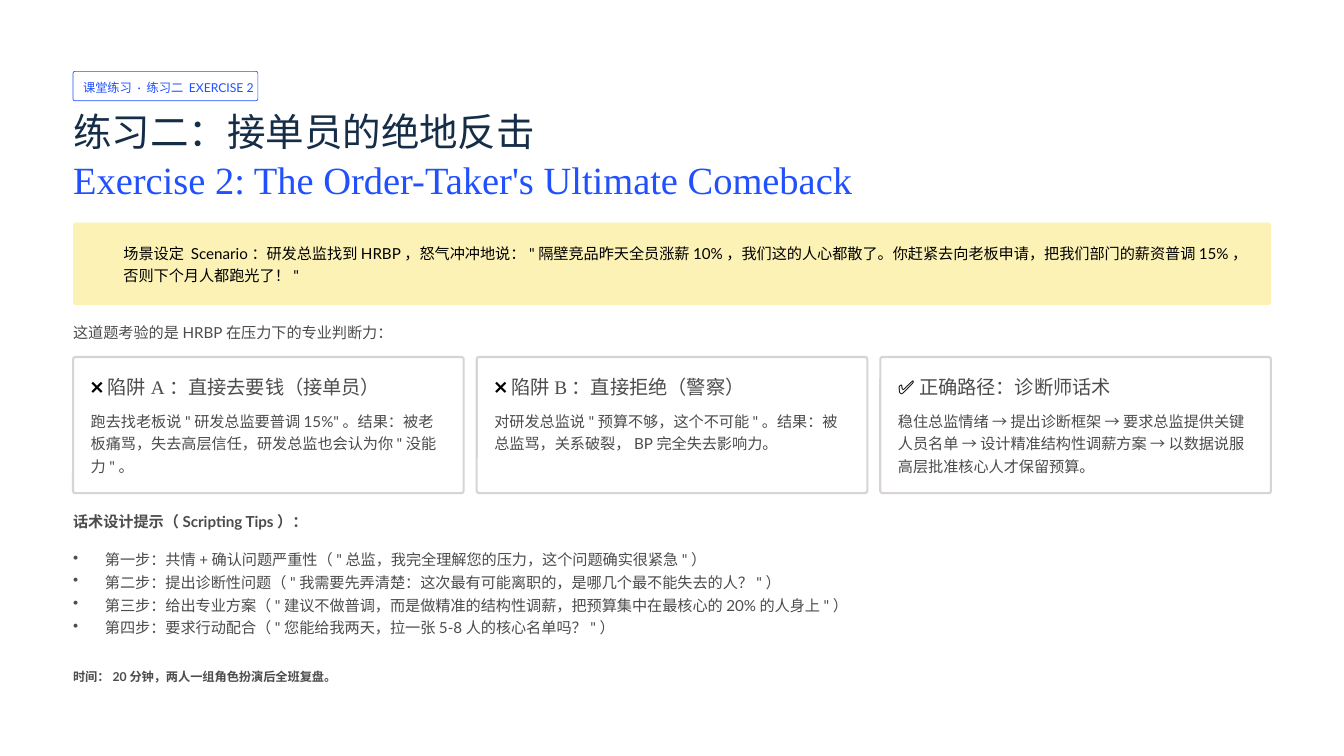
from lxml.etree import SubElement
from pptx import Presentation
from pptx.dml.color import RGBColor
from pptx.enum.shapes import MSO_SHAPE as Kind
from pptx.oxml.ns import qn
from pptx.util import Inches, Pt

BLUE, NAVY, GRAY, BLACK, WHITE = "2150FE", "152D47", "4C4C4D", "000000", "FFFFFF"
SAND, EDGE = "FCF2B5", "D8D4D4"
BODY, HEAD = "Lato", "Times New Roman"

TAG = "课堂练习 · 练习二 EXERCISE 2"
TITLE = [
    [("练习二：接单员的绝地反击", NAVY)],
    [("Exercise 2: The Order-Taker's Ultimate Comeback", BLUE)],
]
SCENE = "场景设定 Scenario：研发总监找到HRBP，怒气冲冲地说：\"隔壁竞品昨天全员涨薪10%，我们这的人心都散了。你赶紧去向老板申请，把我们部门的薪资普调15%，否则下个月人都跑光了！\""
INTRO = "这道题考验的是HRBP在压力下的专业判断力："
CARDS = [
    ("❌", " 陷阱A：直接去要钱（接单员）",
     "跑去找老板说\"研发总监要普调15%\"。结果：被老板痛骂，失去高层信任，研发总监也会认为你\"没能力\"。"),
    ("❌", " 陷阱B：直接拒绝（警察）",
     "对研发总监说\"预算不够，这个不可能\"。结果：被总监骂，关系破裂，BP完全失去影响力。"),
    ("✅", " 正确路径：诊断师话术",
     "稳住总监情绪 → 提出诊断框架 → 要求总监提供关键人员名单 → 设计精准结构性调薪方案 → 以数据说服高层批准核心人才保留预算。"),
]
TIPS = "话术设计提示（Scripting Tips）："
STEPS = [
    "第一步：共情+确认问题严重性（\"总监，我完全理解您的压力，这个问题确实很紧急\"）",
    "第二步：提出诊断性问题（\"我需要先弄清楚：这次最有可能离职的，是哪几个最不能失去的人？\"）",
    "第三步：给出专业方案（\"建议不做普调，而是做精准的结构性调薪，把预算集中在最核心的20%的人身上\"）",
    "第四步：要求行动配合（\"您能给我两天，拉一张5-8人的核心名单吗？\"）",
]
TIME = "时间：20分钟，两人一组角色扮演后全班复盘。"

LEFT, WIDE = 0.87, 14.26
CARD, PAD = 4.65, 0.21
STEP = (WIDE - CARD) / (len(CARDS) - 1)

deck = Presentation()
deck.slide_width, deck.slide_height = Inches(16), Inches(9)
slide = deck.slides.add_slide(deck.slide_layouts[6])


def rgb(code):
    return RGBColor.from_string(code)


def panel(x, y, w, h, round=0.02, fill=None, line=None, thick=1):
    box = slide.shapes.add_shape(
        Kind.ROUNDED_RECTANGLE, Inches(x), Inches(y), Inches(w), Inches(h))
    box.shadow.inherit = False
    box.adjustments[0] = round
    if fill:
        box.fill.solid()
        box.fill.fore_color.rgb = rgb(fill)
    else:
        box.fill.background()
    if line:
        box.line.color.rgb = rgb(line)
        box.line.width = Pt(thick)
    else:
        box.line.fill.background()


def bullet(para):
    props = para._p.get_or_add_pPr()
    props.set("marL", str(Inches(0.38)))
    props.set("indent", str(-Inches(0.38)))
    SubElement(props, qn("a:buChar")).set("char", "•")


def write(text, x, y, w, h, size=13, lead=19.5, font=BODY, color=GRAY,
          bold=False, wrap=True, dots=False):
    frame = slide.shapes.add_textbox(
        Inches(x), Inches(y), Inches(w), Inches(h)).text_frame
    frame.word_wrap = wrap
    frame.margin_left = frame.margin_right = 0
    frame.margin_top = frame.margin_bottom = 0
    lines = [text] if isinstance(text, str) else text
    for i, line in enumerate(lines):
        para = frame.paragraphs[0] if i == 0 else frame.add_paragraph()
        if dots:
            bullet(para)
        para.line_spacing = Pt(lead)
        for words, tint in [(line, color)] if isinstance(line, str) else line:
            run = para.add_run()
            run.text = words
            run.font.size = Pt(size)
            run.font.name = font
            run.font.bold = bold
            run.font.color.rgb = rgb(tint)


back = slide.background.fill
back.solid()
back.fore_color.rgb = rgb(WHITE)

panel(LEFT, 0.85, 2.2, 0.35, round=0.064, line=BLUE, thick=0.6)
write(TAG, 0.99, 0.91, 2.1, 0.22, size=10.5, lead=15.5, color=BLUE, wrap=True)
write(TITLE, LEFT, 1.26, 9.46, 1.15, size=33, lead=41.5, font=HEAD)

panel(LEFT, 2.65, WIDE, 0.98, round=0.028, fill=SAND)
write(SCENE, 1.47, 2.85, 13.48, 0.55, color=BLACK)
write(INTRO, LEFT, 3.8, WIDE, 0.27, wrap=True)

for i, (mark, name, note) in enumerate(CARDS):
    x = LEFT + i * STEP
    panel(x, 4.25, CARD, 1.62, round=0.017, fill=WHITE, line=EDGE, thick=1.8)
    write([[(mark, BLACK), (name, GRAY)]], x + PAD, 4.46, CARD - 2 * PAD, 0.29,
          size=16.5, lead=20.5, font=HEAD)
    write(note, x + PAD, 4.85, CARD - 2 * PAD, 0.82)

write(TIPS, LEFT, 6.05, WIDE, 0.27, bold=True)
write(STEPS, LEFT, 6.5, WIDE, 1.26, dots=True)
write(TIME, LEFT, 7.93, WIDE, 0.22, size=10.5, lead=15.5, bold=True)

deck.save("out.pptx")
